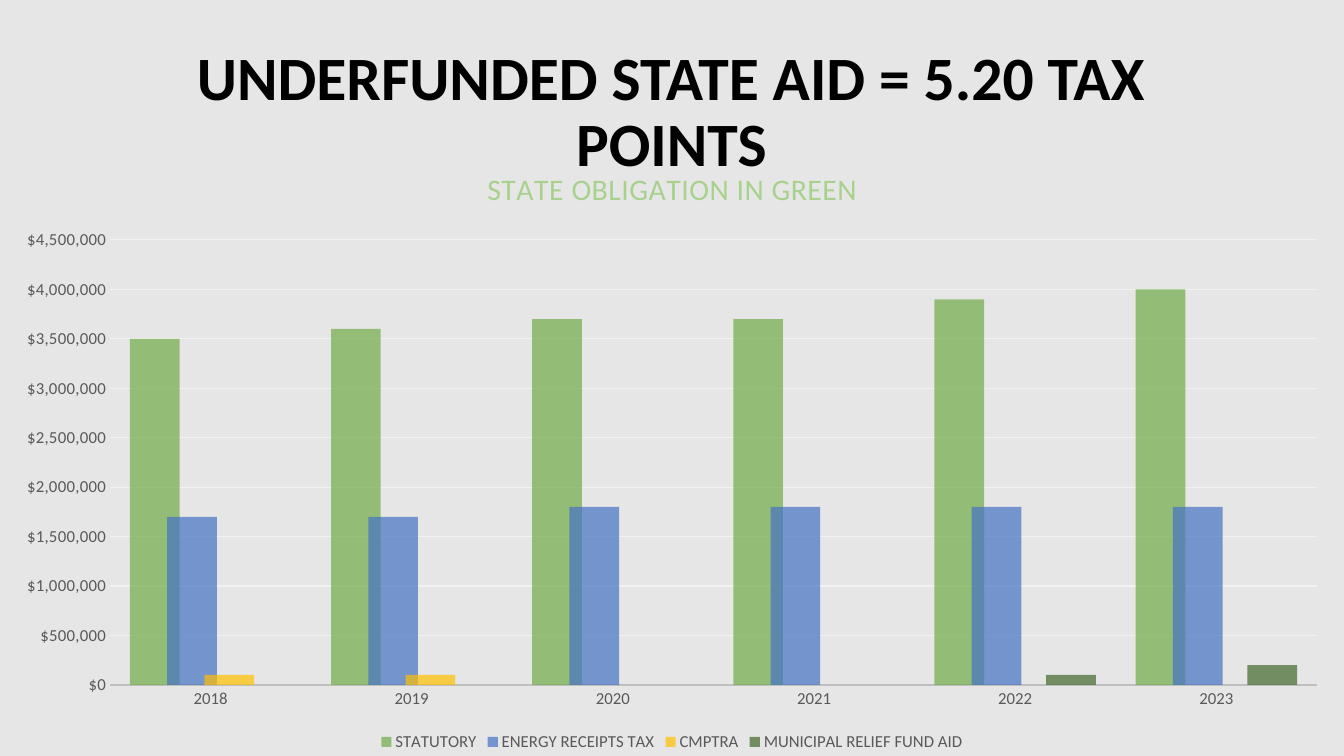
from dataclasses import dataclass
from typing import Optional

from lxml import etree
from pptx import Presentation
from pptx.chart.data import CategoryChartData
from pptx.dml.color import RGBColor
from pptx.enum.chart import XL_CHART_TYPE, XL_LEGEND_POSITION, XL_TICK_MARK
from pptx.enum.text import MSO_ANCHOR, PP_ALIGN
from pptx.oxml import parse_xml
from pptx.oxml.ns import nsdecls, qn
from pptx.util import Emu, Pt

COLUMN = XL_CHART_TYPE.COLUMN_CLUSTERED
BOTTOM = XL_LEGEND_POSITION.BOTTOM
NO_TICK = XL_TICK_MARK.NONE
MIDDLE = MSO_ANCHOR.MIDDLE
CENTER = PP_ALIGN.CENTER

SCALE = 914400 / 100.8
FONT = "Calibri"
COLORS = {
    "back": "E7E6E6", "title": "000000", "head": "A9D18E", "label": "595959",
    "axis": "BFBFBF", "grid": "F2F2F2", "green": "70AD47", "blue": "4472C4",
    "gold": "FFC000", "moss": "43682B",
}
YEARS = ["2018", "2019", "2020", "2021", "2022", "2023"]


@dataclass
class Fund:
    name: str
    color: str
    vals: list[Optional[int]]


@dataclass
class Box:
    left: int
    top: int
    width: int
    height: int

    def emu(self) -> list[Emu]:
        return [px(n) for n in (self.left, self.top, self.width, self.height)]


FUNDS = [
    Fund("STATUTORY", "green",
         [3500000, 3600000, 3700000, 3700000, 3900000, 4000000]),
    Fund("ENERGY RECEIPTS TAX", "blue",
         [1700000, 1700000, 1800000, 1800000, 1800000, 1800000]),
    Fund("CMPTRA", "gold", [100000, 100000, None, None, None, None]),
    Fund("MUNICIPAL RELIEF FUND AID", "moss",
         [None, None, None, None, 100000, 200000]),
]
TITLE = Box(92, 40, 1159, 147)
CHART = Box(0, 145, 1344, 611)
PLOT = Box(110, 240, 1207, 445)
HEAD = Box(482, 163, 370, 30)


def px(n: int) -> Emu:
    return Emu(round(n * SCALE))


def rgb(key: str) -> RGBColor:
    return RGBColor.from_string(COLORS[key])


def style(font, size: float, color: str, bold: bool = False) -> None:
    font.name = FONT
    font.size = Pt(size)
    font.bold = bold
    font.color.rgb = rgb(color)


def spread(font, gap: int) -> None:
    """Set letter spacing in hundredths of a point."""
    font._element.set("spc", str(gap))


def place(parent, index: int, box: Box, plot: bool = False) -> None:
    """Fix a chart part at a spot given in slide px."""
    for old in parent.findall(qn("c:layout")):
        parent.remove(old)
    parts = {"xMode": "edge", "yMode": "edge",
             "x": (box.left - CHART.left) / CHART.width,
             "y": (box.top - CHART.top) / CHART.height}
    if plot:
        parts = {"layoutTarget": "inner", **parts,
                 "w": box.width / CHART.width, "h": box.height / CHART.height}
    tags = "".join(f'<c:{tag} val="{val}"/>' for tag, val in parts.items())
    parent.insert(index, parse_xml(
        f'<c:layout {nsdecls("c")}><c:manualLayout>{tags}'
        '</c:manualLayout></c:layout>'))


def add_title(slide) -> None:
    frame = slide.shapes.add_textbox(*TITLE.emu()).text_frame
    frame.word_wrap = True
    frame.vertical_anchor = MIDDLE
    frame.text = "UNDERFUNDED STATE AID = 5.20 TAX POINTS"
    para = frame.paragraphs[0]
    para.alignment = CENTER
    para.line_spacing = 0.9
    style(para.runs[0].font, 44, "title", True)


def add_funds(slide) -> None:
    data = CategoryChartData(number_format='"$"#,##0')
    data.categories = YEARS
    for fund in FUNDS:
        data.add_series(fund.name, fund.vals)
    chart = slide.shapes.add_chart(COLUMN, *CHART.emu(), data).chart
    style(chart.font, 10, "title")

    # Heading
    chart.has_title = True
    frame = chart.chart_title.text_frame
    frame.text = "STATE OBLIGATION IN GREEN"
    run = frame.paragraphs[0].runs[0]
    style(run.font, 21.28, "head")
    spread(run.font, 50)
    chart.chart_title.include_in_layout = False
    space = chart._chartSpace
    place(space.find(".//" + qn("c:title")), 1, HEAD)
    place(space.find(".//" + qn("c:plotArea")), 0, PLOT, True)

    # Legend
    chart.has_legend = True
    chart.legend.position = BOTTOM
    chart.legend.include_in_layout = False
    style(chart.legend.font, 12, "label")

    # Axes
    years, money = chart.category_axis, chart.value_axis
    for axis in (years, money):
        axis.major_tick_mark = axis.minor_tick_mark = NO_TICK
        style(axis.tick_labels.font, 12, "label")
    spread(money.tick_labels.font, 20)
    years.format.line.color.rgb = rgb("axis")
    years.format.line.width = Pt(1.25)
    money.format.line.fill.background()
    money.minimum_scale, money.maximum_scale = 0, 4500000
    money.major_unit = 500000
    money.tick_labels.number_format = '"$"#,##0'
    money.tick_labels.number_format_is_linked = False
    grid = money.major_gridlines.format.line
    grid.color.rgb = rgb("grid")
    grid.width = Pt(0.75)

    # Columns
    plot = chart.plots[0]
    plot.gap_width, plot.overlap = 80, 25
    plot.vary_by_categories = False
    for fund, bars in zip(FUNDS, plot.series):
        bars.format.fill.solid()
        bars.format.fill.fore_color.rgb = rgb(fund.color)
        bars.invert_if_negative = False
        shade = bars._element.find(".//" + qn("a:srgbClr"))
        etree.SubElement(shade, qn("a:alpha")).set("val", "70000")


def main() -> None:
    deck = Presentation()
    deck.slide_width, deck.slide_height = px(1344), px(756)
    slide = deck.slides.add_slide(deck.slide_layouts[6])
    slide.background.fill.solid()
    slide.background.fill.fore_color.rgb = rgb("back")
    add_title(slide)
    add_funds(slide)
    deck.save("out.pptx")


if __name__ == "__main__":
    main()
